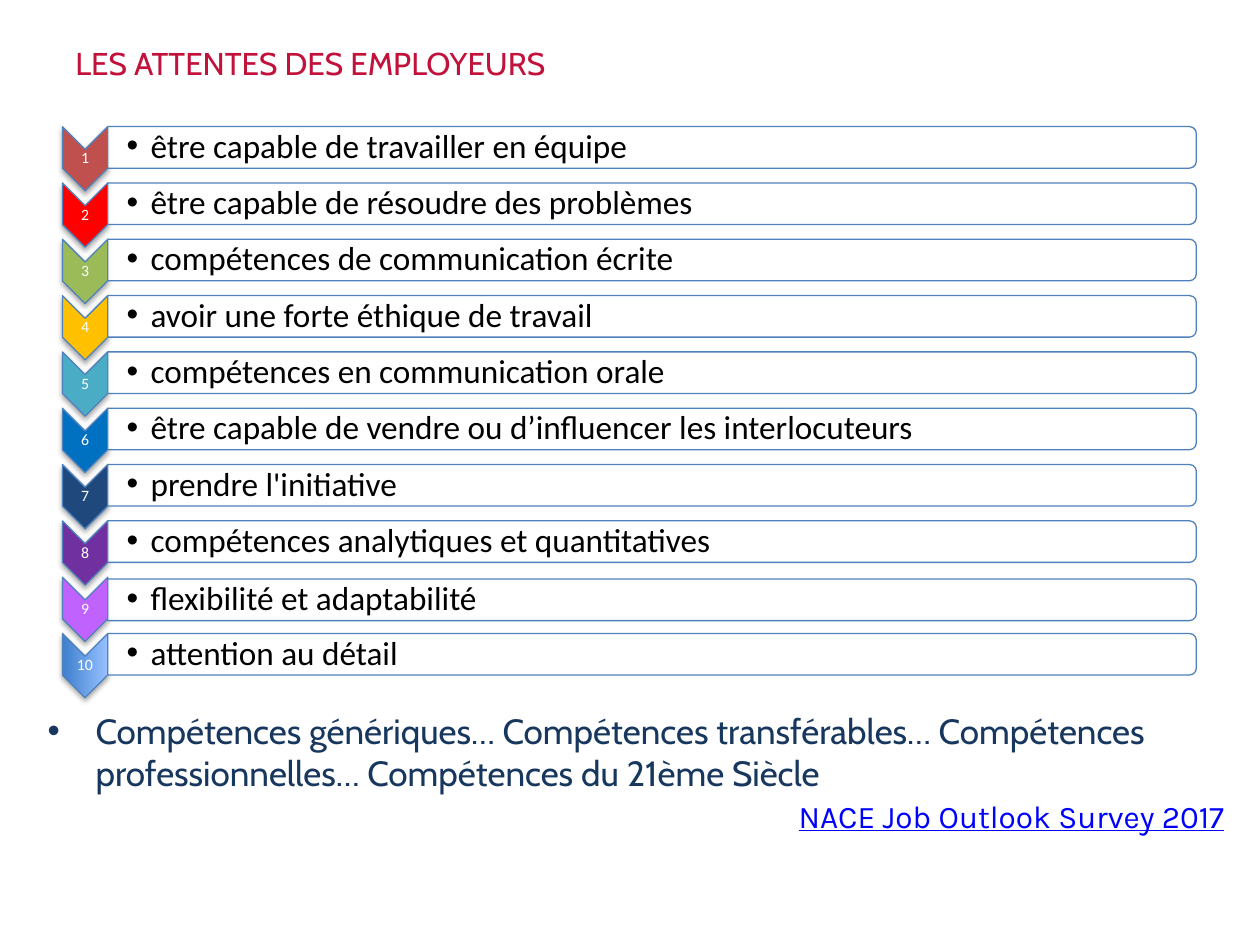
import dataclasses
import typing

import lxml.etree
import pptx
import pptx.dml.color
import pptx.enum.shapes
import pptx.enum.text
import pptx.oxml.ns
import pptx.util

COLS, ROWS = 100, 75  # square grid cells, ten to the inch
CELL = pptx.util.Inches(0.1)
PITCH = 4.47
TOP = 10.05
BLUE, WHITE, NAVY = "4F81BD", "FFFFFF", "17375E"
FORMS = pptx.enum.shapes.MSO_SHAPE
ALIGN = pptx.enum.text.PP_ALIGN
MID = pptx.enum.text.MSO_ANCHOR.MIDDLE


@dataclasses.dataclass
class Box:
    x: float
    y: float
    w: float
    h: float

    def cells(self) -> list[int]:
        return [round(v * CELL) for v in (self.x, self.y, self.w, self.h)]

    def turned(self) -> "Box":
        """Frame which covers this box once rotated by a quarter turn."""
        shift = (self.w - self.h) / 2
        return Box(self.x + shift, self.y - shift, self.h, self.w)


@dataclasses.dataclass
class Skill:
    text: str
    fill: str | tuple[str, str]
    drop: float = 0


SKILLS = [
    Skill("être capable de travailler en équipe", "C0504D"),
    Skill("être capable de résoudre des problèmes", "FF0000"),
    Skill("compétences de communication écrite", "9BBB59"),
    Skill("avoir une forte éthique de travail", "FFC000"),
    Skill("compétences en communication orale", "4BACC6"),
    Skill("être capable de vendre ou d’influencer les interlocuteurs", "0070C0"),
    Skill("prendre l'initiative", "1F497D"),
    Skill("compétences analytiques et quantitatives", "7030A0"),
    Skill("flexibilité et adaptabilité", "C062FD", drop=0.15),
    Skill("attention au détail", ("3E7FCD", "96C0FF")),
]


def rgb(code: str) -> pptx.dml.color.RGBColor:
    return pptx.dml.color.RGBColor.from_string(code)


def add_sub(node: typing.Any, tag: str, **attrs: typing.Any) -> typing.Any:
    name = pptx.oxml.ns.qn("a:" + tag)
    return lxml.etree.SubElement(node, name, {k: str(v) for k, v in attrs.items()})


def set_all(item: typing.Any, values: dict) -> None:
    for name, value in values.items():
        setattr(item, name, value)


def add_text(slide, box: Box, text: str, font: dict, color: str,
             para: dict | None = None, frame: dict | None = None,
             pad: tuple = (0.1, 0.05, 0.1, 0.05),
             hang: float = 0) -> None:
    """Add a text box; a hang in inches makes its paragraph a bullet."""
    body = slide.shapes.add_textbox(*box.cells()).text_frame
    sides = ("margin_left", "margin_top", "margin_right", "margin_bottom")
    set_all(body, dict(zip(sides, map(pptx.util.Inches, pad))))
    set_all(body, {"word_wrap": True, **(frame or {})})
    line = body.paragraphs[0]
    set_all(line, para or {})
    if hang:
        props = line._p.get_or_add_pPr()
        indent = pptx.util.Inches(hang)
        props.set("marL", str(indent))
        props.set("indent", str(-indent))
        add_sub(add_sub(props, "buClr"), "srgbClr", val=color)
        add_sub(props, "buFont", typeface="Arial")
        add_sub(props, "buChar", char="•")
    run = line.add_run()
    run.text = text
    set_all(run.font, font)
    run.font.color.rgb = rgb(color)


def add_form(slide, kind, box: Box, fill: str | tuple[str, str],
             adjust: tuple) -> typing.Any:
    """Add a shape that points up or right, turned to fill the box."""
    form = slide.shapes.add_shape(kind, *box.turned().cells())
    form.rotation = 90
    form.shadow.inherit = False
    for i, value in enumerate(adjust):
        form.adjustments[i] = value
    if isinstance(fill, tuple):
        form.fill.gradient()
        form.fill.gradient_angle = 90
        for stop, place, code in zip(form.fill.gradient_stops, (0, 1), fill):
            stop.position = place
            stop.color.rgb = rgb(code)
    else:
        form.fill.solid()
        form.fill.fore_color.rgb = rgb(fill)
    form.line.color.rgb = rgb(BLUE)
    form.line.width = pptx.util.Pt(0.75)
    return form


def add_shade(form) -> None:
    effects = form._element.spPr.find(pptx.oxml.ns.qn("a:effectLst"))
    shade = add_sub(effects, "outerShdw", blurRad=pptx.util.Pt(3.1),
                    dist=pptx.util.Pt(1.8), dir=5400000, rotWithShape=0)
    add_sub(add_sub(shade, "srgbClr", val="000000"), "alpha", val=35000)


def add_skill(slide, index: int, skill: Skill) -> None:
    y = TOP + index * PITCH
    low = y + skill.drop
    tight = (0.01,) * 4
    mark = add_form(slide, FORMS.CHEVRON, Box(4.95, y, 3.6, 5.1), skill.fill, (0.5,))
    add_shade(mark)
    add_text(slide, Box(4.95, y + 1.8, 3.6, 1.5), str(index + 1),
             {"name": "Calibri", "size": pptx.util.Pt(9)}, WHITE,
             {"alignment": ALIGN.CENTER, "line_spacing": 0.9},
             {"vertical_anchor": MID}, tight)
    bar = add_form(slide, FORMS.ROUND_2_SAME_RECTANGLE, Box(8.55, low, 86.4, 3.3),
                   WHITE, (0.167, 0))
    tint = bar._element.spPr.find(".//" + pptx.oxml.ns.qn("a:srgbClr"))
    add_sub(tint, "alpha", val=89000)
    add_text(slide, Box(8.55, low + 0.15, 86.2, 3), skill.text,
             {"name": "Calibri", "size": pptx.util.Pt(19)}, "000000",
             {"level": 1, "line_spacing": 0.9}, {"vertical_anchor": MID},
             (0.15,) + tight[1:], hang=0.19)


def main() -> None:
    deck = pptx.Presentation()
    deck.slide_width, deck.slide_height = COLS * CELL, ROWS * CELL
    slide = deck.slides.add_slide(deck.slide_layouts[6])
    add_text(slide, Box(5, 3, 81.7, 6.2), "LES ATTENTES DES EMPLOYEURS",
             {"name": "Cabin", "size": pptx.util.Pt(18)}, "C2113A")
    for index, skill in enumerate(SKILLS):
        add_skill(slide, index, skill)
    add_text(slide, Box(62.4, 62.8, 37, 4), "NACE Job Outlook Survey 2017",
             {"name": "Karla", "size": pptx.util.Pt(18), "underline": True}, "0000FF")
    add_text(slide, Box(2.8, 55.8, 92.2, 8),
             "Compétences génériques… Compétences transférables… "
             "Compétences professionnelles… Compétences du 21ème Siècle",
             {"name": "Cabin", "size": pptx.util.Pt(20)}, NAVY, hang=0.38)
    deck.save("out.pptx")


if __name__ == "__main__":
    main()
